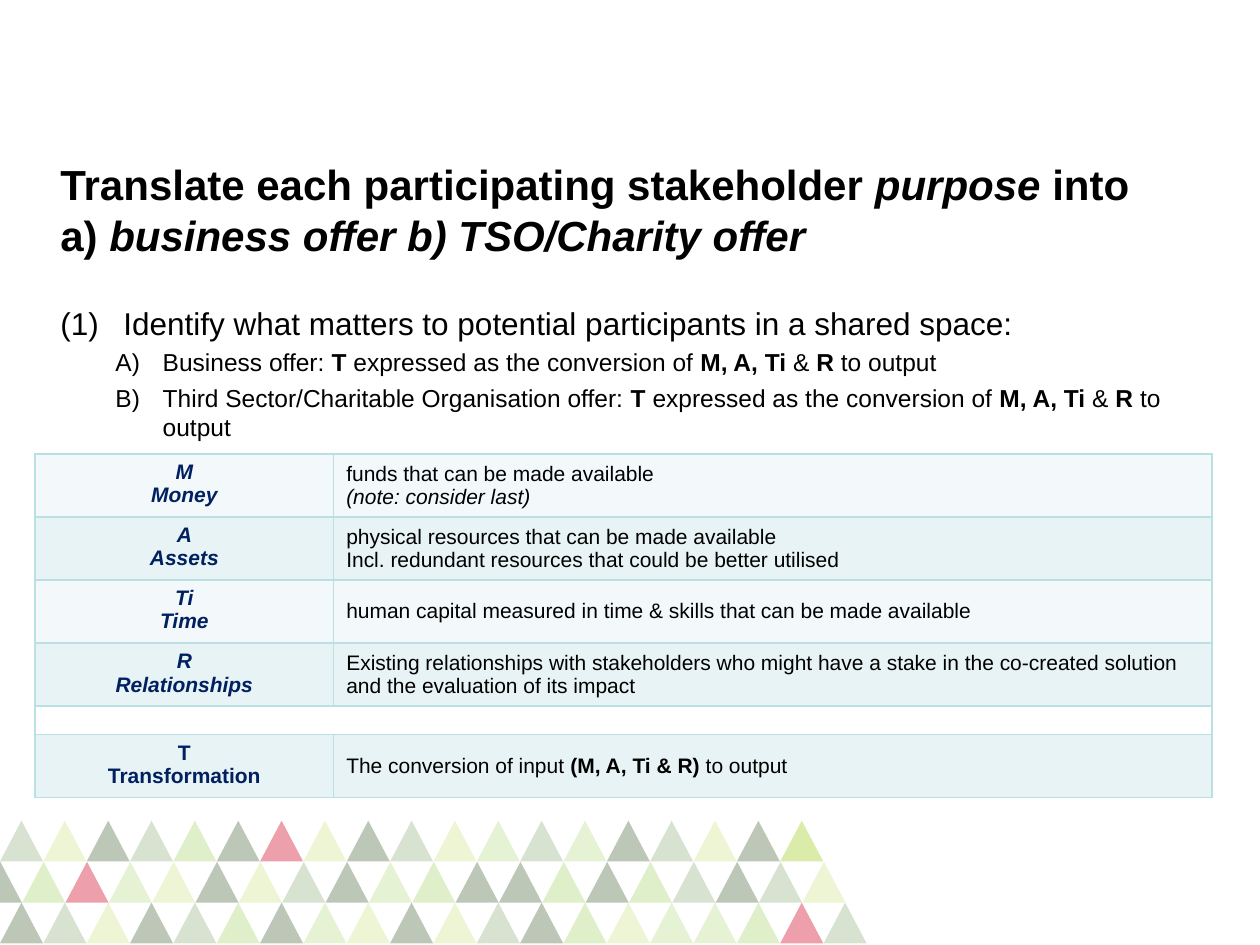
from lxml import etree
from pptx import Presentation
from pptx import util as u
from pptx.dml import color
from pptx.enum import shapes, text
from pptx.oxml import ns

TINTS = {
    "S": ("4A812C", 22), "L": ("A7CD28", 20), "Y": ("A7CD28", 40), "D": ("264715", 30),
    "G": ("81C12C", 25), "P": ("81C12C", 20), "R": ("D3122E", 40),
}
TRIANGLE_ROWS = [
    (0, 469, "SLDSGDRLDSLPSPDSLDY"),
    (-12.1, 492.5, "DGRPLDLSDPGDDGDGSDSL"),
    (0, 515.8, "DSLDSGDPLDLSDGLPPGRS"),
]
TRIANGLE_STEP = 24.77
TITLE = [
    [("Translate each participating stakeholder ", ""), ("purpose", "i"), (" into", "")],
    [("a) ", ""), ("business offer b) TSO/Charity offer", "i")],
]
CONVERSION = [
    ("T ", "b"), ("expressed as the conversion of ", ""), ("M, A, Ti ", "b"),
    ("& ", ""), ("R ", "b"), ("to output", ""),
]
RESOURCES = [
    ("M", "Money", [[("funds that can be made available", "")], [("(note: consider last)", "i")]]),
    ("A", "Assets", [[("physical resources that can be made available", "")],
                     [("Incl. redundant resources that could be better utilised", "")]]),
    ("Ti", "Time", [[("human capital measured in time & skills that can be made available", "")]]),
    ("R", "Relationships", [[("Existing relationships with stakeholders who might have a stake in "
                              "the co-created solution and the evaluation of its impact", "")]]),
    None,
    ("T", "Transformation", [[("The conversion of input ", ""), ("(M, A, Ti & R) ", "b"),
                              ("to output", "")]]),
]


def rgb(hex_code):
    """Turn a hex string into a colour."""
    return color.RGBColor.from_string(hex_code)


def add_xml(parent, tag, **attributes):
    """Append a drawing element to a parent and return it."""
    return etree.SubElement(parent, ns.qn(tag), attributes)


def style(paragraph, size, hex_code="000000", bold=None, italic=None):
    """Set the font shared by a whole paragraph."""
    font = paragraph.font
    font.name, font.size, font.bold, font.italic = "Arial", u.Pt(size), bold, italic
    font.color.rgb = rgb(hex_code)


def add_runs(paragraph, runs):
    """Add runs, each marked for bold (b) or italic (i)."""
    for wording, marks in runs:
        run = paragraph.add_run()
        run.text = wording
        if "b" in marks:
            run.font.bold = True
        if "i" in marks:
            run.font.italic = True


def add_triangles(slide):
    """Draw the band of tinted triangles."""
    for left, top, tints in TRIANGLE_ROWS:
        for column, tint in enumerate(tints):
            triangle = slide.shapes.add_shape(
                shapes.MSO_SHAPE.ISOSCELES_TRIANGLE, u.Pt(left + column * TRIANGLE_STEP),
                u.Pt(top), u.Pt(24.6), u.Pt(23.3))
            hex_code, opacity = TINTS[tint]
            triangle.shadow.inherit = False
            triangle.line.fill.background()
            triangle.fill.solid()
            triangle.fill.fore_color.rgb = rgb(hex_code)
            solid = triangle.fill._xPr.find(ns.qn("a:solidFill"))
            add_xml(solid[0], "a:alpha", val=str(opacity * 1000))


def add_frame(slide, top, height):
    """Add a wrapping text box across the slide and return its text frame."""
    frame = slide.shapes.add_textbox(u.Pt(27.4), u.Pt(top), u.Pt(665), u.Pt(height)).text_frame
    frame.word_wrap = True
    return frame


def add_title(slide):
    """Write the two-line heading."""
    frame = add_frame(slide, 92.2, 54.7)
    frame.vertical_anchor = text.MSO_ANCHOR.MIDDLE
    heading = frame.paragraphs[0]
    style(heading, 24, bold=True)
    add_runs(heading, TITLE[0])
    heading.add_line_break()
    add_runs(heading, TITLE[1])


def number(paragraph, scheme, margin, hanging):
    """Give a paragraph automatic numbering with a hanging indent."""
    properties = paragraph._p.get_or_add_pPr()
    properties.set("marL", str(u.Pt(margin)))
    properties.set("indent", str(-u.Pt(hanging)))
    add_xml(properties, "a:buFont", typeface="+mj-lt")
    add_xml(properties, "a:buAutoNum", type=scheme)


def add_steps(slide):
    """Write the numbered step and its two offers."""
    frame = add_frame(slide, 150.5, 346)
    frame.margin_top = u.Pt(23)
    step = frame.paragraphs[0]
    number(step, "arabicParenBoth", 36, 36)
    style(step, 18)
    add_runs(step, [("Identify what matters to potential participants in a shared space:", "")])
    for offer in ("Business offer: ", "Third Sector/Charitable Organisation offer: "):
        paragraph = frame.add_paragraph()
        paragraph.level = 1
        paragraph.space_before = u.Pt(3.4)
        number(paragraph, "alphaUcParenR", 58.5, 27)
        style(paragraph, 14)
        add_runs(paragraph, [(offer, "")] + CONVERSION)


def dress_cell(cell, hex_code):
    """Give a cell its borders and fill."""
    properties = cell._tc.get_or_add_tcPr()
    for side in ("L", "R", "T", "B"):
        border = add_xml(properties, f"a:ln{side}", w=str(u.Pt(1)))
        add_xml(add_xml(border, "a:solidFill"), "a:srgbClr", val="BBE0E3")
    cell.fill.solid()
    cell.fill.fore_color.rgb = rgb(hex_code)


def fill_cell(cell, lines, **font):
    """Write lines of runs into a cell and return its paragraphs."""
    frame = cell.text_frame
    for index, runs in enumerate(lines):
        paragraph = frame.add_paragraph() if index else frame.paragraphs[0]
        style(paragraph, 12, **font)
        add_runs(paragraph, runs)
    return frame.paragraphs


def add_resources(slide):
    """Build the table of resources and their transformation."""
    table = slide.shapes.add_table(
        len(RESOURCES), 2, u.Pt(20), u.Pt(259.4), u.Pt(672.5), u.Pt(187.3)).table
    table.first_row = table.horz_banding = False
    table.columns[0].width, table.columns[1].width = u.Pt(170.7), u.Pt(501.8)
    for index, resource in enumerate(RESOURCES):
        row = table.rows[index]
        row.height = u.Pt(34.2 if resource else 16.3)
        band = "E7F3F4" if index % 2 else "F3F9FA"
        for cell in row.cells:
            dress_cell(cell, band if resource else "FFFFFF")
        label, meaning = row.cells
        if resource is None:
            label.merge(meaning)
            add_xml(label.text_frame.paragraphs[0]._p, "a:endParaRPr", sz="700")
            continue
        symbol, name, lines = resource
        for paragraph in fill_cell(label, [[(symbol, "")], [(name, "")]],
                                   hex_code="002060", bold=True, italic=symbol != "T"):
            paragraph.alignment = text.PP_ALIGN.CENTER
        meaning.vertical_anchor = text.MSO_ANCHOR.MIDDLE
        fill_cell(meaning, lines)


def main():
    """Build and save the slide."""
    deck = Presentation()
    deck.slide_width, deck.slide_height = u.Pt(720), u.Pt(540)
    slide = deck.slides.add_slide(deck.slide_layouts[6])
    add_triangles(slide)
    add_title(slide)
    add_steps(slide)
    add_resources(slide)
    deck.save("out.pptx")


if __name__ == "__main__":
    main()
